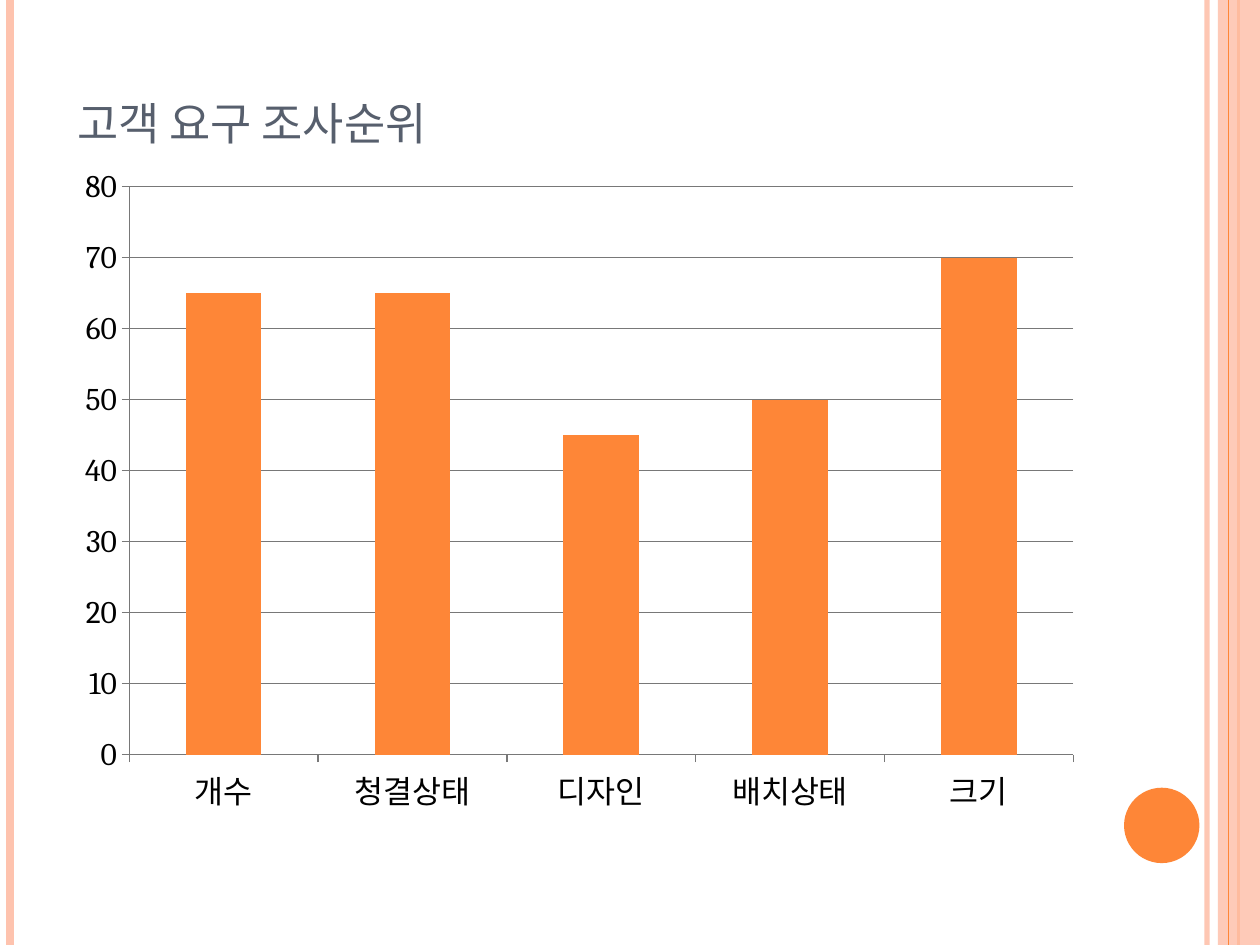
from pptx import Presentation
from pptx.chart.data import CategoryChartData
from pptx.dml.color import RGBColor
from pptx.enum.chart import XL_CHART_TYPE, XL_TICK_MARK
from pptx.enum.shapes import MSO_CONNECTOR, MSO_SHAPE
from pptx.enum.text import MSO_ANCHOR, PP_ALIGN
from pptx.oxml.ns import qn
from pptx.util import Cm, Pt
from lxml.etree import SubElement

ORANGE = RGBColor(0xFE, 0x86, 0x37)
PEACH = RGBColor(0xFE, 0xC3, 0xAE)
SLATE = RGBColor(0x57, 0x5F, 0x6D)
GRAY = RGBColor(0x78, 0x78, 0x78)
BLACK = RGBColor(0, 0, 0)
FONT = "Cambria"
SLIDE_HEIGHT = Cm(19.05)


def set_opacity(shape, percent):
    color = next(shape._element.spPr.iter(qn("a:srgbClr")))
    SubElement(color, qn("a:alpha")).set("val", str(percent * 1000))


def add_stripe(slide, left, color, width):
    stripe = slide.shapes.add_connector(
        MSO_CONNECTOR.STRAIGHT, Cm(left), 0, Cm(left), SLIDE_HEIGHT)
    stripe.line.color.rgb = color
    stripe.line.width = Pt(width)
    SubElement(stripe._element.spPr, qn("a:effectLst"))
    return stripe


presentation = Presentation()
presentation.slide_width = Cm(25.4)
presentation.slide_height = SLIDE_HEIGHT
slide = presentation.slides.add_slide(presentation.slide_layouts[5])

set_opacity(add_stripe(slide, 24.33, PEACH, 3), 93)
add_stripe(slide, 0.2, PEACH, 4.5)
add_stripe(slide, 24.97, ORANGE, 1.5)
band = slide.shapes.add_shape(
    MSO_SHAPE.RECTANGLE, Cm(24.55), 0, Cm(0.85), SLIDE_HEIGHT)
add_stripe(slide, 24.76, ORANGE, 0.75)
circle = slide.shapes.add_shape(
    MSO_SHAPE.OVAL, Cm(22.66), Cm(15.88), Cm(1.52), Cm(1.52))
for shape, color in ((band, PEACH), (circle, ORANGE)):
    shape.fill.solid()
    shape.fill.fore_color.rgb = color
    shape.line.fill.background()
    shape.shadow.inherit = False
set_opacity(band, 87)

title = slide.shapes.title
title.left, title.top, title.width, title.height = Cm(1.3), 0, Cm(20.75), Cm(3.18)
title.text_frame.vertical_anchor = MSO_ANCHOR.BOTTOM
title.text_frame.word_wrap = True
paragraph = title.text_frame.paragraphs[0]
paragraph.alignment = PP_ALIGN.LEFT
run = paragraph.add_run()
run.text = "고객 요구 조사순위"
run.font.name = FONT
run.font.size = Pt(32)
run.font.color.rgb = SLATE
run._r.get_or_add_rPr().set("cap", "small")

survey = CategoryChartData()
survey.categories = ["개수", "청결상태", "디자인", "배치상태", "크기"]
survey.add_series("Series 1", (65, 65, 45, 50, 70))
chart = slide.shapes.add_chart(
    XL_CHART_TYPE.COLUMN_CLUSTERED,
    Cm(1.3), Cm(3.12), Cm(20.75), Cm(13.54), survey).chart
chart.has_title = False
chart.has_legend = False
chart.font.name = FONT
chart.font.size = Pt(18)
chart.font.color.rgb = BLACK

plot = chart.plots[0]
plot.vary_by_categories = False
plot.gap_width = 150
plot.series[0].format.fill.solid()
plot.series[0].format.fill.fore_color.rgb = ORANGE

value_axis = chart.value_axis
value_axis.minimum_scale = 0
value_axis.maximum_scale = 80
value_axis.major_unit = 10
value_axis.has_major_gridlines = True
for axis in (chart.category_axis, value_axis):
    axis.major_tick_mark = XL_TICK_MARK.OUTSIDE
    axis.minor_tick_mark = XL_TICK_MARK.NONE
for lines in (chart.category_axis, value_axis, value_axis.major_gridlines):
    lines.format.line.color.rgb = GRAY
    lines.format.line.width = Pt(0.75)

presentation.save("out.pptx")
